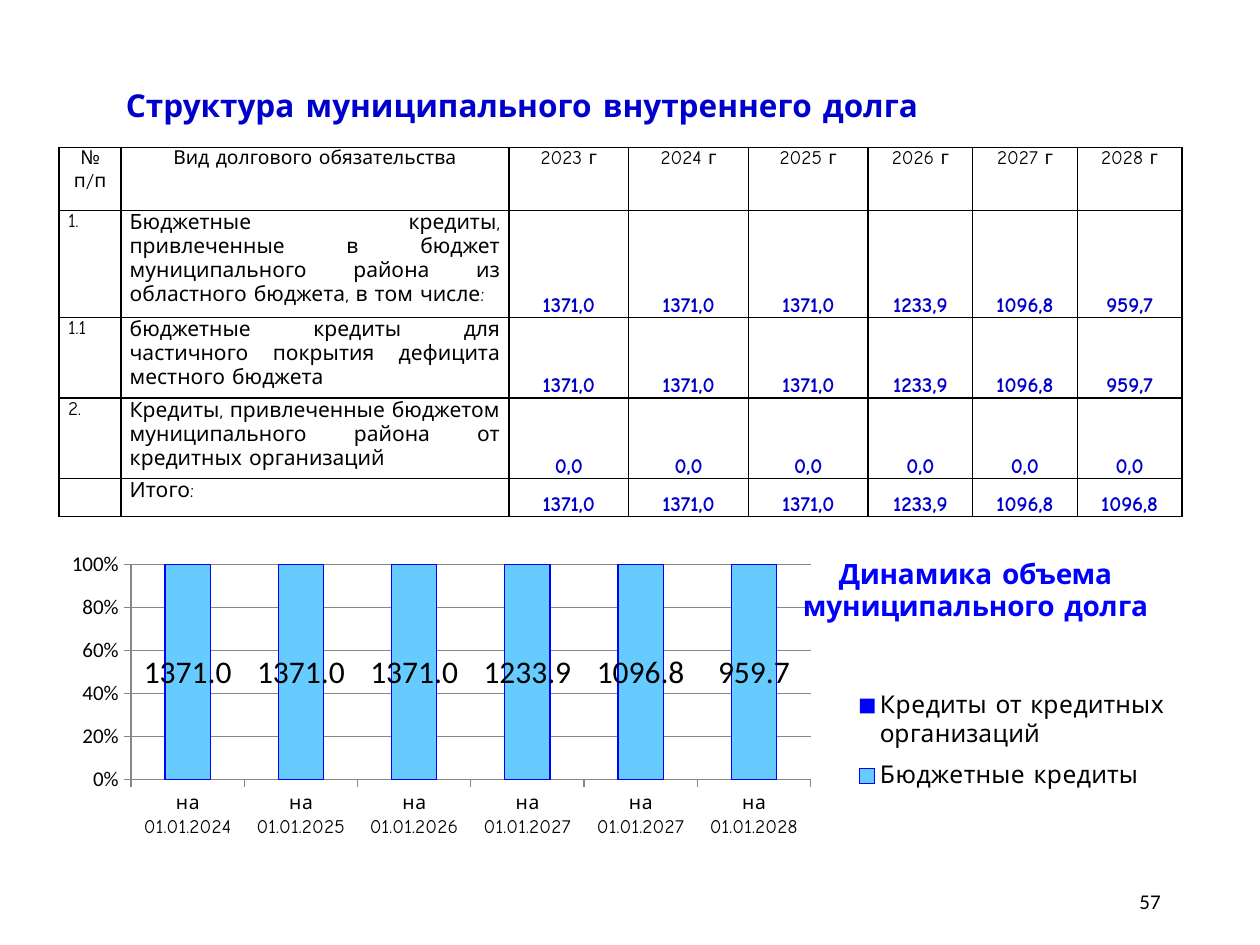
from lxml import etree
from pptx import Presentation
from pptx.chart.data import CategoryChartData
from pptx.dml.color import RGBColor
from pptx.enum.chart import XL_CHART_TYPE as Kind, XL_LEGEND_POSITION as Side, XL_TICK_MARK as Tick
from pptx.enum.text import MSO_ANCHOR as Anchor, PP_ALIGN as Align
from pptx.oxml import parse_xml
from pptx.oxml.ns import nsdecls, qn
from pptx.util import Inches, Pt

FACE, PLAIN = "Comic Neue", "Calibri"
BLACK, NAVY, BLUE, SKY, GREY = "000000", "0000CC", "0000FF", "66CCFF", "868686"

TITLE = "Структура муниципального внутреннего долга"
PAGE = "57"
HEAD = ["№ п/п", "Вид долгового обязательства"] + [f"{y} г" for y in range(2023, 2029)]
LOAN = ["1371,0", "1371,0", "1371,0", "1233,9", "1096,8"]
ROWS = [
    HEAD,
    ["1.", "Бюджетные кредиты, привлеченные в бюджет муниципального района "
     "из областного бюджета, в том числе:"] + LOAN + ["959,7"],
    ["1.1", "бюджетные кредиты для частичного покрытия дефицита местного бюджета"]
    + LOAN + ["959,7"],
    ["2.", "Кредиты, привлеченные бюджетом муниципального района от кредитных организаций"]
    + ["0,0"] * 6,
    ["", "Итого:"] + LOAN + ["1096,8"],
]
WIDTHS = [0.49, 3.08] + [0.95] * 3 + [0.83] * 3
HEIGHTS = [0.5, 0.85, 0.64, 0.64, 0.25]

CHART = ["Динамика объема", "муниципального долга"]
DATES = [f"на 01.01.{y}" for y in (2024, 2025, 2026, 2027, 2027, 2028)]
SERIES = [
    ("Бюджетные кредиты", [1371, 1371, 1371, 1233.9, 1096.8, 959.7], SKY),
    ("Кредиты от кредитных организаций", [0] * 6, BLUE),
]


def rgb(code):
    return RGBColor.from_string(code)


def style(font, size, color=BLACK, face=FACE, bold=False):
    font.size, font.name, font.bold = Pt(size), face, bold
    font.color.rgb = rgb(color)


def write(para, text, align, *look):
    para.alignment = align
    run = para.add_run()
    run.text = text
    style(run.font, *look)


def label(slide, box, text, align, *look):
    frame = slide.shapes.add_textbox(*map(Inches, box)).text_frame
    frame.word_wrap = True
    frame.vertical_anchor = Anchor.MIDDLE
    write(frame.paragraphs[0], text, align, *look)


def border(cell):
    props = cell._tc.get_or_add_tcPr()
    for side in "LRTB":
        props.append(parse_xml(
            f'<a:ln{side} {nsdecls("a")} w="12700"><a:solidFill>'
            f'<a:srgbClr val="{BLACK}"/></a:solidFill></a:ln{side}>'))


def look(row, col):
    if row == 0:
        return Align.CENTER, 11
    if col == 0:
        return Align.LEFT, 11
    if col == 1:
        return (Align.LEFT if row == len(ROWS) - 1 else Align.JUSTIFY), 12
    return Align.CENTER, 12, NAVY, FACE, True


def add_grid(slide):
    box = map(Inches, (0.47, 1.17, sum(WIDTHS), sum(HEIGHTS)))
    table = slide.shapes.add_table(len(ROWS), len(WIDTHS), *box).table
    table.first_row = table.horz_banding = False
    for col, width in zip(table.columns, WIDTHS):
        col.width = Inches(width)
    for r, row in enumerate(ROWS):
        table.rows[r].height = Inches(HEIGHTS[r])
        for c, text in enumerate(row):
            cell = table.cell(r, c)
            cell.margin_left = cell.margin_right = Inches(0.07)
            cell.margin_top = cell.margin_bottom = 0
            cell.vertical_anchor = Anchor.BOTTOM if r and c > 1 else Anchor.TOP
            border(cell)
            cell.fill.background()
            write(cell.text_frame.paragraphs[0], text, *look(r, c))


def place(node, inner=False, **spots):
    for old in node.findall(qn("c:layout")):
        node.remove(old)
    layout = etree.Element(qn("c:layout"))
    manual = etree.SubElement(layout, qn("c:manualLayout"))
    if inner:
        etree.SubElement(manual, qn("c:layoutTarget")).set("val", "inner")
    for mode in ("xMode", "yMode"):
        etree.SubElement(manual, qn(f"c:{mode}")).set("val", "edge")
    for key, value in spots.items():
        etree.SubElement(manual, qn(f"c:{key}")).set("val", str(value))
    before = node.find(qn("c:tx"))
    if before is None:
        before = node.find(qn("c:legendPos"))
    if before is None:
        node.insert(0, layout)
    else:
        before.addnext(layout)


def add_bars(slide):
    data = CategoryChartData(number_format="0.0")
    data.categories = DATES
    for name, values, _ in SERIES:
        data.add_series(name, values)
    box = map(Inches, (0.31, 4.3, 9.14, 3.04))
    chart = slide.shapes.add_chart(Kind.COLUMN_STACKED_100, *box, data).chart
    style(chart.font, 18, BLACK, PLAIN)

    frame = chart.chart_title.text_frame
    frame.add_paragraph()
    for para, text in zip(frame.paragraphs, CHART):
        write(para, text, Align.CENTER, 16, BLUE, FACE, True)
    chart.chart_title.include_in_layout = True
    title = chart.chart_title._element
    title.get_or_add_overlay().set("val", "1") if hasattr(title, "get_or_add_overlay") else None
    place(title, x=0.66, y=0.03)

    chart.has_legend = True
    chart.legend.position = Side.RIGHT
    chart.legend.include_in_layout = False
    style(chart.legend.font, 14)
    place(chart.legend._element, x=0.7, y=0.36, w=0.29, h=0.32)
    place(chart._chartSpace.chart.plotArea, True, x=0.08, y=0.06, w=0.59, h=0.56)

    for axis, size, face in ((chart.category_axis, 11, FACE), (chart.value_axis, 12, PLAIN)):
        style(axis.tick_labels.font, size, BLACK, face)
        axis.major_tick_mark = Tick.OUTSIDE
        axis.format.line.color.rgb = rgb(GREY)
    axis = chart.value_axis
    axis.minimum_scale, axis.maximum_scale, axis.major_unit = 0, 1, 0.2
    axis.tick_labels.number_format = "0%"
    axis.tick_labels.number_format_is_linked = False
    axis.has_major_gridlines = True
    axis.major_gridlines.format.line.color.rgb = rgb(GREY)

    plot = chart.plots[0]
    plot.gap_width, plot.overlap, plot.vary_by_categories = 150, 100, False
    for bars, (_, _, color) in zip(plot.series, SERIES):
        bars.format.fill.solid()
        bars.format.fill.fore_color.rgb = rgb(color)
    loans = plot.series[0]
    loans.format.line.color.rgb = rgb(BLUE)
    loans.format.line.width = Pt(0.75)
    tags = loans.data_labels
    tags.show_value = True
    tags.number_format, tags.number_format_is_linked = "0.0", False
    style(tags.font, 18, BLACK, PLAIN)


def main():
    deck = Presentation()
    deck.slide_width, deck.slide_height = Inches(10), Inches(7.5)
    slide = deck.slides.add_slide(deck.slide_layouts[6])
    label(slide, (0.9, 0.58, 8.7, 0.5), TITLE, Align.LEFT, 18, NAVY, FACE, True)
    label(slide, (7.06, 6.95, 2.25, 0.4), PAGE, Align.RIGHT, 12, BLACK, PLAIN)
    add_grid(slide)
    add_bars(slide)
    deck.save("out.pptx")


if __name__ == "__main__":
    main()
